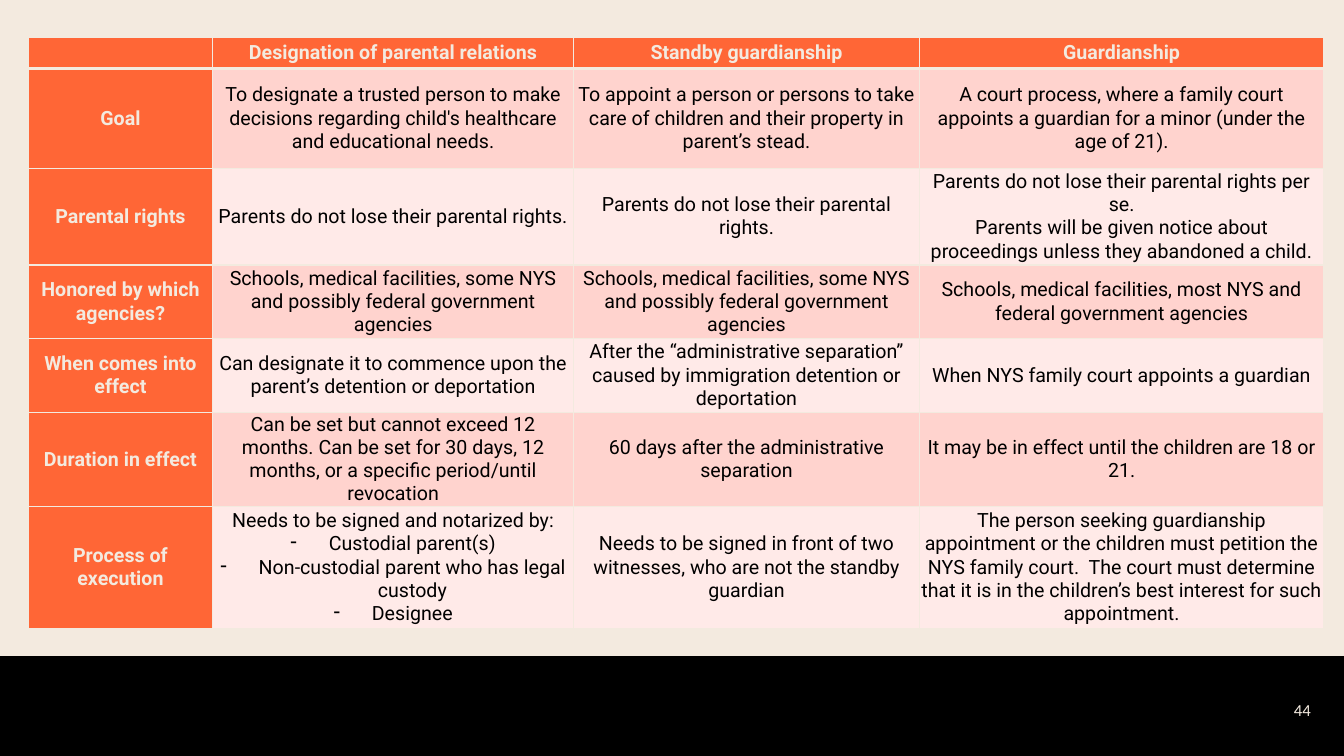
from lxml import etree
from pptx import Presentation
from pptx.dml.color import RGBColor
from pptx.enum import shapes, text
from pptx.oxml import ns
from pptx.util import Inches, Pt

CREAM = RGBColor(0xF3, 0xEA, 0xDF)
ORANGE = RGBColor(0xFF, 0x66, 0x36)
PINK = RGBColor(0xFF, 0xD3, 0xCE)
PALE = RGBColor(0xFF, 0xEA, 0xE8)
BLACK = RGBColor(0, 0, 0)

COL_WIDTHS = [1.83, 3.58, 3.43, 4.01]
ROW_HEIGHTS = [0.31, 0.99, 0.96, 0.73, 0.73, 0.92, 1.21]

# Each cell holds paragraphs split by line breaks; "- " starts a bullet
ROWS = [
    ["", "Designation of parental relations", "Standby guardianship", "Guardianship"],
    ["Goal",
     "To designate a trusted person to make decisions regarding child's healthcare and educational needs.",
     "To appoint a person or persons to take care of children and their property in parent’s stead.",
     "A court process, where a family court appoints a guardian for a minor (under the age of 21)."],
    ["Parental rights",
     "Parents do not lose their parental rights.",
     "Parents do not lose their parental rights.",
     "Parents do not lose their parental rights per se.\n"
     "Parents will be given notice about proceedings unless they abandoned a child."],
    ["Honored by which agencies?",
     "Schools, medical facilities, some NYS and possibly federal government agencies",
     "Schools, medical facilities, some NYS and possibly federal government agencies",
     "Schools, medical facilities, most NYS and federal government agencies"],
    ["When comes into effect",
     "Can designate it to commence upon the parent’s detention or deportation",
     "After the “administrative separation” caused by immigration detention or deportation",
     "When NYS family court appoints a guardian"],
    ["Duration in effect",
     "Can be set but cannot exceed 12 months. Can be set for 30 days, 12 months, "
     "or a specific period/until revocation",
     "60 days after the administrative separation",
     "It may be in effect until the children are 18 or 21."],
    ["Process of execution",
     "Needs to be signed and notarized by:\n- Custodial parent(s)\n"
     "- Non-custodial parent who has legal custody\n- Designee",
     "Needs to be signed in front of two witnesses, who are not the standby guardian",
     "The person seeking guardianship appointment or the children must petition the NYS family court.  "
     "The court must determine that it is in the children’s best interest for such appointment."],
]


def set_borders(cell, widths):
    tc_pr = cell._tc.get_or_add_tcPr()
    for i, (side, width) in enumerate(widths.items()):
        ln = etree.Element(ns.qn(f"a:ln{side}"), w=str(Pt(width)))
        fill = etree.SubElement(ln, ns.qn("a:solidFill"))
        etree.SubElement(fill, ns.qn("a:srgbClr"), val=str(CREAM))
        tc_pr.insert(i, ln)


def add_bullet(p, char):
    p_pr = p._p.get_or_add_pPr()
    p_pr.set("marL", str(Inches(0.38)))
    p_pr.set("indent", str(-Inches(0.38)))
    etree.SubElement(p_pr, ns.qn("a:buChar"), char=char)


prs = Presentation()
prs.slide_width, prs.slide_height = Inches(13.33), Inches(7.5)
s = prs.slides.add_slide(prs.slide_layouts[6])
s.background.fill.solid()
s.background.fill.fore_color.rgb = CREAM

# Footer band
band = s.shapes.add_shape(shapes.MSO_SHAPE.RECTANGLE, 0, Inches(6.51), Inches(13.33), Inches(0.99))
band.shadow.inherit = False
band.fill.solid()
band.fill.fore_color.rgb = BLACK
band.line.fill.background()

# Page number
tf = s.shapes.add_textbox(Inches(12.6), Inches(6.82), Inches(0.5), Inches(0.37)).text_frame
tf.word_wrap = True
tf.vertical_anchor = text.MSO_ANCHOR.BOTTOM
p = tf.paragraphs[0]
p.text = "44"
p.alignment = text.PP_ALIGN.RIGHT
p.font.name, p.font.size = "Calibri", Pt(12)
p.font.color.rgb = CREAM

# Comparison table
table = s.shapes.add_table(len(ROWS), len(COL_WIDTHS), Inches(0.28), Inches(0.37),
                           Inches(sum(COL_WIDTHS)), Inches(sum(ROW_HEIGHTS))).table
for column, width in zip(table.columns, COL_WIDTHS):
    column.width = Inches(width)
for row, height in zip(table.rows, ROW_HEIGHTS):
    row.height = Inches(height)

for r, row in enumerate(ROWS):
    for c, content in enumerate(row):
        cell = table.cell(r, c)
        heading = r == 0 or c == 0
        cell.fill.solid()
        cell.fill.fore_color.rgb = ORANGE if heading else PINK if r % 2 else PALE
        set_borders(cell, {"L": 1, "R": 1, "T": 3 if r == 1 else 1, "B": 3 if r == 0 else 1})
        cell.margin_left = cell.margin_right = cell.margin_top = cell.margin_bottom = 0
        cell.vertical_anchor = text.MSO_ANCHOR.MIDDLE
        tf = cell.text_frame
        tf.text = content.replace("\n- ", "\n")
        for p, line in zip(tf.paragraphs, content.split("\n")):
            if line.startswith("- "):
                add_bullet(p, "-")
            p.alignment = text.PP_ALIGN.CENTER
            p.font.name, p.font.size, p.font.bold = "Roboto", Pt(14), heading
            p.font.color.rgb = CREAM if heading else BLACK

prs.save("out.pptx")
